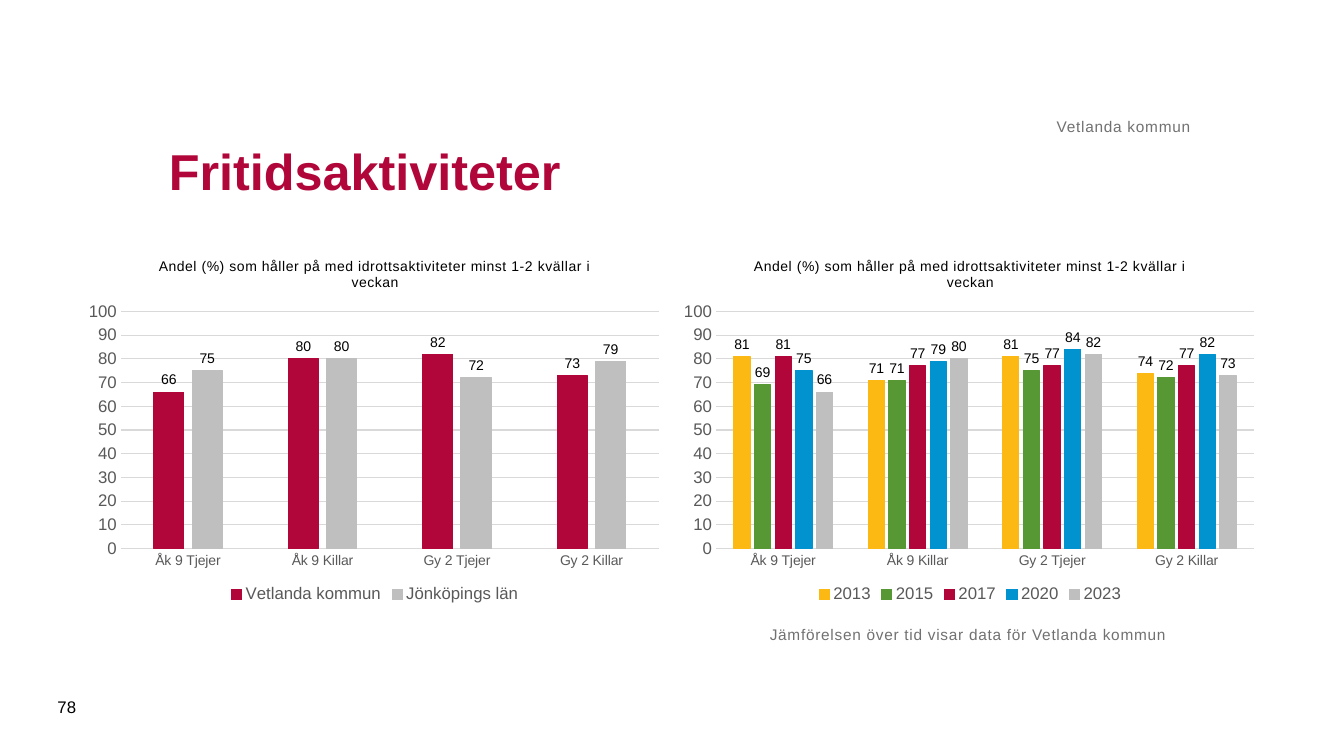
from lxml.etree import SubElement
from pptx import Presentation
from pptx.chart.data import CategoryChartData
from pptx.dml.color import RGBColor
from pptx.enum.chart import XL_CHART_TYPE as ChartType, XL_LABEL_POSITION as LabelPos
from pptx.enum.chart import XL_LEGEND_POSITION as LegendPos, XL_TICK_MARK as Tick
from pptx.enum.text import MSO_ANCHOR as Anchor, PP_ALIGN as Align
from pptx.oxml import parse_xml
from pptx.oxml.ns import nsdecls, qn
from pptx.util import Cm, Pt

FONT = "Arial"
COLORS = {
    "red": "B1063A", "silver": "BFBFBF", "yellow": "FDB913", "green": "579835",
    "blue": "0093D0", "black": "000000", "axis": "595959", "note": "717171",
    "grid": "D9D9D9",
}
HEADING = "Fritidsaktiviteter"
MUNICIPALITY = "Vetlanda kommun"
TREND_NOTE = "Jämförelsen över tid visar data för Vetlanda kommun"
PAGE = "78"
CHART_TITLE = "Andel (%) som håller på med idrottsaktiviteter minst 1-2 kvällar i veckan"
GROUPS = ["Åk 9 Tjejer", "Åk 9 Killar", "Gy 2 Tjejer", "Gy 2 Killar"]
CHARTS = [
    [("Vetlanda kommun", [66, 80, 82, 73], "red"),
     ("Jönköpings län", [75, 80, 72, 79], "silver")],
    [("2013", [81, 71, 81, 74], "yellow"),
     ("2015", [69, 71, 75, 72], "green"),
     ("2017", [81, 77, 77, 77], "red"),
     ("2020", [75, 79, 84, 82], "blue"),
     ("2023", [66, 80, 82, 73], "silver")],
]
CHART_LEFT, CHART_TOP, CHART_WIDTH, CHART_HEIGHT = 2, 6.1, 14.9, 9.2
CHART_STEP = 15
PLOT = {"x": 0.07, "y": 0.19, "w": 0.91, "h": 0.65}
NUMBER_FORMAT = "#,##0;#,##0"


def rgb(color):
    return RGBColor.from_string(COLORS[color])


def format_font(font, size, color, bold=False):
    font.name, font.size, font.bold = FONT, Pt(size), bold
    font.color.rgb = rgb(color)


def write(frame, text, size=11, color="note", bold=False, spacing=0,
          align=Align.LEFT, anchor=Anchor.TOP, inset=None):
    """Put one formatted line in a text frame; spacing is in points."""
    frame.word_wrap = True
    frame.vertical_anchor = anchor
    if inset is not None:
        frame.margin_left = frame.margin_right = Cm(inset)
        frame.margin_top = frame.margin_bottom = Cm(inset)
    paragraph = frame.paragraphs[0]
    paragraph.alignment = align
    run = paragraph.add_run()
    run.text = text
    format_font(run.font, size, color, bold)
    if spacing:
        run.font._element.set("spc", str(int(spacing * 100)))


def add_box(slide, left, top, width, height):
    return slide.shapes.add_textbox(Cm(left), Cm(top), Cm(width), Cm(height)).text_frame


def set_plot_layout(chart):
    plot_area = chart._chartSpace.find(".//" + qn("c:plotArea"))
    for old in plot_area.findall(qn("c:layout")):
        plot_area.remove(old)
    layout = parse_xml(f"<c:layout {nsdecls('c')}/>")
    manual = SubElement(layout, qn("c:manualLayout"))
    settings = {"layoutTarget": "inner", "xMode": "edge", "yMode": "edge", **PLOT}
    for tag, value in settings.items():
        SubElement(manual, qn(f"c:{tag}")).set("val", str(value))
    plot_area.insert(0, layout)


def format_axes(chart):
    groups, percent = chart.category_axis, chart.value_axis
    for axis, size in ((groups, 10), (percent, 12)):
        axis.major_tick_mark = axis.minor_tick_mark = Tick.NONE
        format_font(axis.tick_labels.font, size, "axis")
    percent.minimum_scale, percent.maximum_scale, percent.major_unit = 0, 100, 10
    percent.tick_labels.number_format = NUMBER_FORMAT
    percent.tick_labels.number_format_is_linked = False
    percent.format.line.fill.background()
    percent.has_major_gridlines = True
    for line in (groups.format.line, percent.major_gridlines.format.line):
        line.color.rgb = rgb("grid")
        line.width = Pt(0.75)


def add_column_chart(slide, left, series_rows):
    data = CategoryChartData()
    data.categories = GROUPS
    for name, values, _ in series_rows:
        data.add_series(name, values)
    chart = slide.shapes.add_chart(
        ChartType.COLUMN_CLUSTERED, Cm(left), Cm(CHART_TOP),
        Cm(CHART_WIDTH), Cm(CHART_HEIGHT), data).chart
    format_font(chart.font, 10, "black")

    chart.has_title = True
    write(chart.chart_title.text_frame, CHART_TITLE, size=10, color="black",
          spacing=0.5, align=Align.CENTER)
    chart.chart_title.include_in_layout = False
    chart.has_legend = True
    chart.legend.position = LegendPos.BOTTOM
    chart.legend.include_in_layout = False
    format_font(chart.legend.font, 12, "axis")
    format_axes(chart)
    set_plot_layout(chart)

    plot = chart.plots[0]
    plot.gap_width, plot.overlap, plot.vary_by_categories = 219, -27, False
    for series, (_, _, color) in zip(plot.series, series_rows):
        series.format.fill.solid()
        series.format.fill.fore_color.rgb = rgb(color)
        series.format.line.color.rgb = rgb(color)
        series.format.line.width = Pt(0.75)
        series.invert_if_negative = False
        labels = series.data_labels
        labels.show_value = True
        labels.position = LabelPos.OUTSIDE_END
        labels.number_format, labels.number_format_is_linked = NUMBER_FORMAT, False
        format_font(labels.font, 10, "black")


def main():
    deck = Presentation()
    deck.slide_width, deck.slide_height = Cm(33.87), Cm(19.05)
    slide = deck.slides.add_slide(deck.slide_layouts[5])

    for index, series_rows in enumerate(CHARTS):
        add_column_chart(slide, CHART_LEFT + index * CHART_STEP, series_rows)

    heading = slide.shapes.title
    heading.left, heading.top = Cm(4), Cm(2.5)
    heading.width, heading.height = Cm(26), Cm(3.6)
    write(heading.text_frame, HEADING, size=36, color="red", bold=True,
          anchor=Anchor.MIDDLE)
    write(add_box(slide, 4, 1.58, 26, 1.85), MUNICIPALITY, spacing=0.5,
          align=Align.RIGHT, anchor=Anchor.BOTTOM, inset=0)
    write(add_box(slide, 1.2, 17.3, 1.45, 1), PAGE, size=12, color="black",
          anchor=Anchor.MIDDLE)
    write(add_box(slide, 19.4, 15.75, 13.5, 2.4), TREND_NOTE, spacing=0.5, inset=0)
    deck.save("out.pptx")


if __name__ == "__main__":
    main()
